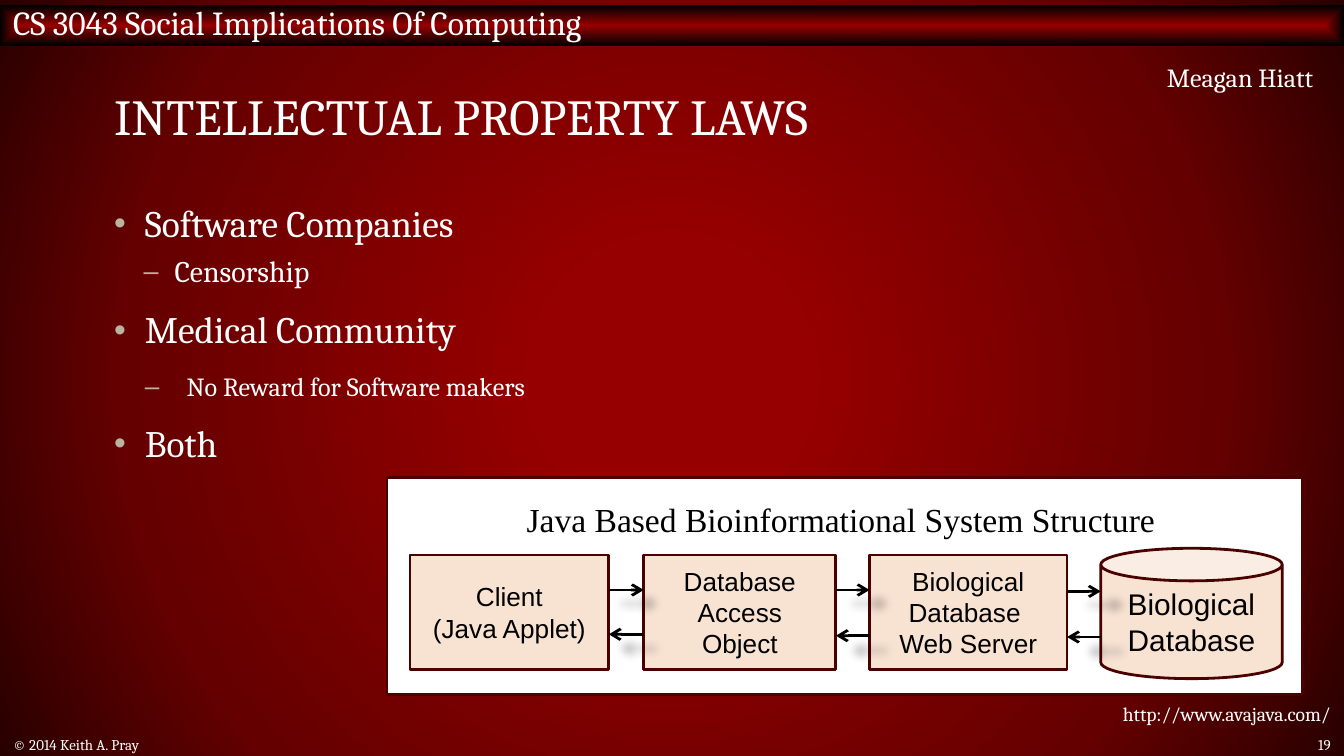
import pptx
import pptx.util
import pptx.dml.color
import pptx.enum.shapes
import pptx.enum.text
import pptx.oxml
import pptx.oxml.ns

Inches, Pt = pptx.util.Inches, pptx.util.Pt
SHAPE = pptx.enum.shapes.MSO_SHAPE
ALIGN = pptx.enum.text.PP_ALIGN
ANCHOR = pptx.enum.text.MSO_ANCHOR
NS = pptx.oxml.ns.nsdecls("a")

# Content
COURSE = "CS 3043 Social Implications Of Computing"
TITLE = "INTELLECTUAL PROPERTY LAWS"
BULLETS = [  # level, text
    (0, "Software Companies"),
    (1, "Censorship"),
    (0, "Medical Community"),
    (2, "No Reward for Software makers"),
    (0, "Both"),
]
LABELS = [  # text, box, size, alignment
    ("© 2014 Keith A. Pray", (0, 5.46, 6.08, 0.16), 8, ALIGN.LEFT),
    ("19", (9.32, 5.46, 0.68, 0.16), 8, ALIGN.RIGHT),
    ("Meagan Hiatt", (7.49, 0.41, 2.38, 0.34), 14, ALIGN.RIGHT),
    ("http://www.avajava.com/", (0, 5.17, 10, 0.29), 10.5, ALIGN.RIGHT),
]
DIAGRAM_TITLE = "Java Based Bioinformational System Structure"
NODES = [  # text, shape, box, size
    ("Client\n(Java Applet)", SHAPE.RECTANGLE, (3.05, 4.13, 1.48, 0.85), 14),
    ("Database Access Object", SHAPE.RECTANGLE, (4.79, 4.13, 1.43, 0.85), 14),
    ("Biological Database \nWeb Server", SHAPE.RECTANGLE, (6.47, 4.13, 1.47, 0.85), 14),
    ("Biological Database", SHAPE.CAN, (8.19, 4.08, 1.35, 0.97), 16),
]
ARROW_ROWS = [(4.39, 4.72), (4.39, 4.73), (4.4, 4.74)]  # request, reply

THEME = {
    "font": "Cambria", "node_font": "Arial", "diagram_font": "Times New Roman",
    "text": "FFFFFF", "ink": "000000", "panel": "FFFFFF",
    "node": "F8E3D3", "border": "4B0000", "bullet": "BCB49E",
    "background": [(17, "960000"), (71, "650000"), (100, "290000")],
    "banner": [(0, "960000"), (100, "000000")],
    "banner_size": 18, "title_size": 27, "diagram_size": 18, "line": 1.5,
}
LEVELS = [  # size, left indent, hanging, space before, bullet, bullet percent
    (20, 0.23, 0.23, 12, "•", 90),
    (16, 0.45, 0.23, 6, "–", 90),
    (14, 0.54, 0.31, 12, "‒", 100),
]


def rgb(value):
    return pptx.dml.color.RGBColor.from_string(value)


def place(shape, box):
    shape.left, shape.top, shape.width, shape.height = map(Inches, box)


def style(tf, size, font=THEME["font"], color=THEME["text"], align=ALIGN.LEFT):
    for p in tf.paragraphs:
        p.alignment = align
        for r in p.runs:
            r.font.size, r.font.name = Pt(size), font
            r.font.color.rgb = rgb(color)


def add_text(box, text, size, wrap=True, anchor=ANCHOR.TOP, **look):
    tf = s.shapes.add_textbox(*map(Inches, box)).text_frame
    tf.text, tf.word_wrap, tf.vertical_anchor = text, wrap, anchor
    style(tf, size, **look)
    return tf


def add_box(kind, box, fill=None):
    sp = s.shapes.add_shape(kind, *map(Inches, box))
    sp.shadow.inherit = False
    if fill:
        sp.fill.solid()
        sp.fill.fore_color.rgb = rgb(fill)
        sp.line.color.rgb, sp.line.width = rgb(THEME["border"]), Pt(THEME["line"])
    return sp


def set_gradient(fill, parent, stops, path):
    """Replace a gradient fill by one that spreads from the centre."""
    fill.gradient()
    old = parent.find(pptx.oxml.ns.qn("a:gradFill"))
    marks = "".join(f'<a:gs pos="{pos * 1000}"><a:srgbClr val="{color}"/></a:gs>'
                    for pos, color in stops)
    parent.replace(old, pptx.oxml.parse_xml(
        f'<a:gradFill {NS} rotWithShape="1"><a:gsLst>{marks}</a:gsLst><a:path path="{path}">'
        '<a:fillToRect l="50000" t="50000" r="50000" b="50000"/></a:path></a:gradFill>'))


def add_bullet(p, level, first):
    size, left, hang, before, char, percent = LEVELS[level]
    p.level, p.line_spacing = level, 0.9
    pPr = p._p.get_or_add_pPr()
    pPr.set("marL", str(Inches(left)))
    pPr.set("indent", str(-Inches(hang)))
    for xml in (f'<a:buClr {NS}><a:srgbClr val="{THEME["bullet"]}"/></a:buClr>',
                f'<a:buSzPct {NS} val="{percent * 1000}"/>',
                f'<a:buFont {NS} typeface="Arial"/>',
                f'<a:buChar {NS} char="{char}"/>'):
        pPr.append(pptx.oxml.parse_xml(xml))
    if not first:
        p.space_before = Pt(before)
    p.runs[0].font.size = Pt(size)


def add_arrow(x1, x2, y):
    line = s.shapes.add_connector(pptx.enum.shapes.MSO_CONNECTOR.STRAIGHT,
                                  Inches(x1), Inches(y), Inches(x2), Inches(y))
    line.line.color.rgb, line.line.width = rgb(THEME["ink"]), Pt(THEME["line"])
    line.line._get_or_add_ln().append(pptx.oxml.parse_xml(f'<a:tailEnd {NS} type="arrow"/>'))
    line._element.spPr.append(pptx.oxml.parse_xml(
        f'<a:effectLst {NS}><a:outerShdw blurRad="{Pt(5)}" dist="{Pt(1)}" dir="5400000" '
        'sx="102000" sy="102000" rotWithShape="0">'
        f'<a:srgbClr val="{THEME["ink"]}"><a:alpha val="32000"/></a:srgbClr>'
        '</a:outerShdw></a:effectLst>'))


prs = pptx.Presentation()
prs.slide_width = Inches(10)
prs.slide_height = prs.slide_width * 9 // 16
s = prs.slides.add_slide(prs.slide_layouts[5])

# Background and banner
set_gradient(s.background.fill, s._element.cSld.bg.bgPr, THEME["background"], "circle")
banner = add_box(SHAPE.RECTANGLE, (0, 0.04, 10, 0.3))
set_gradient(banner.fill, banner._element.spPr, THEME["banner"], "shape")
banner.line.fill.background()
tf = banner.text_frame
tf.text, tf.vertical_anchor, tf.margin_top = COURSE, ANCHOR.MIDDLE, 0
style(tf, THEME["banner_size"])

# Title
title = s.shapes.title
place(title, (0.75, 0.4, 8.5, 1))
tf = title.text_frame
tf.text, tf.vertical_anchor = TITLE, ANCHOR.MIDDLE
style(tf, THEME["title_size"])
tf.paragraphs[0].line_spacing = 0.8

# Bullet list
tf = add_text((0.75, 1.48, 4.25, 3.76), "\n".join(text for _, text in BULLETS), LEVELS[0][0])
for i, (p, (level, _)) in enumerate(zip(tf.paragraphs, BULLETS)):
    add_bullet(p, level, first=i == 0)

# Footer, author and source
for text, box, size, align in LABELS:
    anchor = ANCHOR.MIDDLE if box[3] < 0.2 else ANCHOR.TOP
    add_text(box, text, size, anchor=anchor, align=align)

# Diagram panel and nodes
add_box(SHAPE.RECTANGLE, (2.88, 3.55, 6.81, 1.62), THEME["panel"])
for text, kind, box, size in NODES:
    tf = add_box(kind, box, THEME["node"]).text_frame
    tf.text, tf.vertical_anchor = text, ANCHOR.MIDDLE
    style(tf, size, THEME["node_font"], THEME["ink"], ALIGN.CENTER)

# Arrows both ways across each gap
for (_, _, a, _), (_, _, b, _), (request, reply) in zip(NODES, NODES[1:], ARROW_ROWS):
    right, left = a[0] + a[2], b[0]
    add_arrow(right, left, request)
    add_arrow(left, right, reply)

# Diagram heading
tf = add_text((3.82, 3.7, 4.93, 0.37), DIAGRAM_TITLE, THEME["diagram_size"], wrap=False,
              font=THEME["diagram_font"], color=THEME["ink"])
tf.paragraphs[0].line_spacing = 0.9

prs.save("out.pptx")
